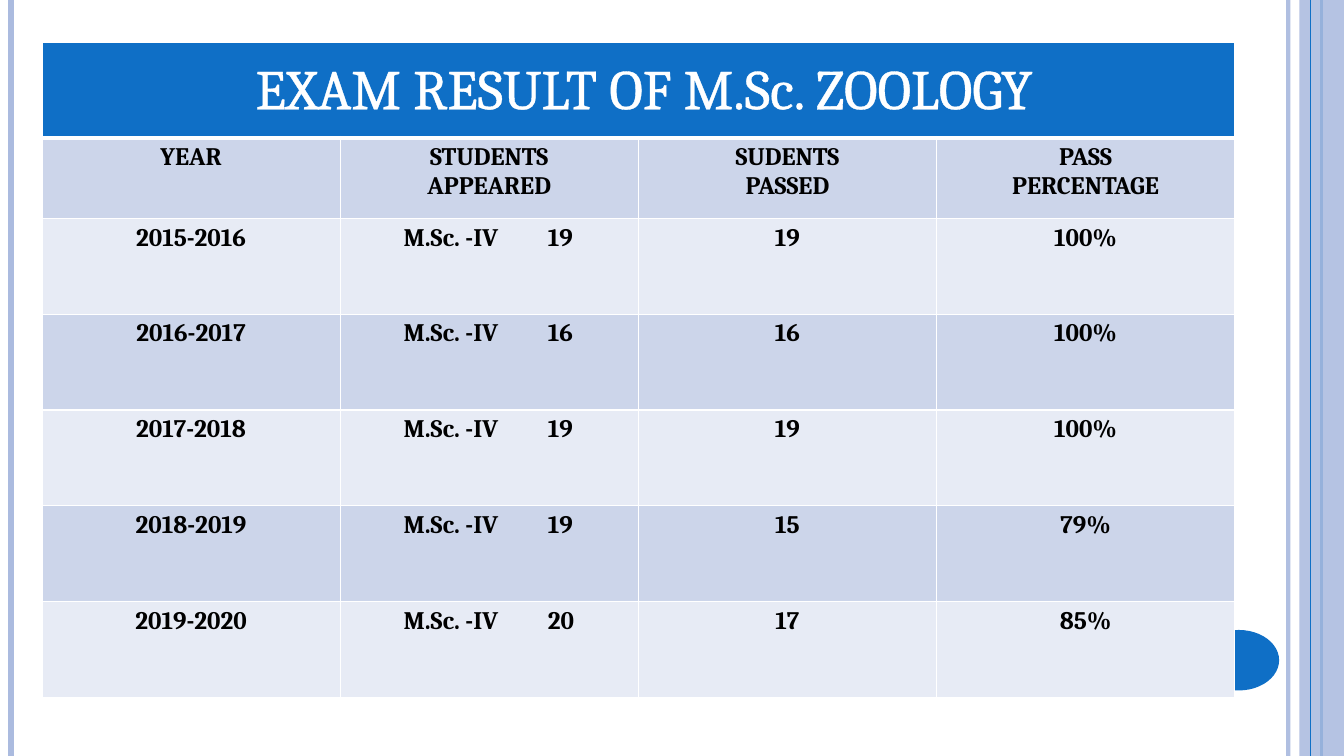
from dataclasses import dataclass

from lxml import etree
from pptx import Presentation, util as u
from pptx.dml.color import RGBColor
from pptx.enum import shapes, text
from pptx.oxml import ns

COLS, ROWS = 160, 90  # grid of twelfths of an inch
UNIT = u.Inches(1) // 12

BLUE = RGBColor(0x0F, 0x6F, 0xC6)
LAVENDER = RGBColor(0xAB, 0xBB, 0xDF)
BAND_DARK = RGBColor(0xCC, 0xD5, 0xEA)
BAND_LIGHT = RGBColor(0xE7, 0xEB, 0xF5)
WHITE = RGBColor(0xFF, 0xFF, 0xFF)
BLACK = RGBColor(0, 0, 0)

CELL_FONT = {"name": "Cambria", "size": u.Pt(18), "bold": True}
TITLE_FONT = {"name": "Cambria", "size": u.Pt(40)}


@dataclass
class Rule:
    col: float
    color: RGBColor
    points: float
    alpha: int = 100


@dataclass
class Panel:
    kind: shapes.MSO_SHAPE
    box: tuple[float, float, float, float]
    color: RGBColor
    alpha: int = 100


@dataclass
class Result:
    year: str
    appeared: int
    passed: int
    percentage: str

    def texts(self) -> list[str]:
        return [self.year, f"M.Sc. -IV\t{self.appeared}",
                str(self.passed), self.percentage]


DECOR = [
    Rule(153.36, LAVENDER, 3, 93),
    Rule(1.32, LAVENDER, 4.5),
    Rule(157.32, BLUE, 1.5),
    Panel(shapes.MSO_SHAPE.RECTANGLE, (154.68, 0, 5.32, ROWS), LAVENDER, 87),
    Rule(156, BLUE, 0.75),
    Panel(shapes.MSO_SHAPE.OVAL, (142.68, 75, 9.6, 7.2), BLUE),
]

HEADINGS = ["YEAR", "STUDENTS\nAPPEARED", "SUDENTS\nPASSED", "PASS\nPERCENTAGE"]
RESULTS = [
    Result("2015-2016", 19, 19, "100%"),
    Result("2016-2017", 16, 16, "100%"),
    Result("2017-2018", 19, 19, "100%"),
    Result("2018-2019", 19, 15, "79%"),
    Result("2019-2020", 20, 17, "85%"),
]
TABLE_BOX = (5, 5, 142, 78)
ROW_HEIGHTS = [11.4, 9.6] + [11.4] * len(RESULTS)
TITLE_BOX = (16.44, 5.76, 120.48, 9.24)


def grid(*cells: float) -> list[int]:
    return [round(c * UNIT) for c in cells]


def set_alpha(element, percent: int) -> None:
    if percent < 100:
        color = next(element.iter(ns.qn("a:srgbClr")))
        etree.SubElement(color, ns.qn("a:alpha"), val=str(percent * 1000))


def set_font(font, values: dict, color: RGBColor) -> None:
    for name, value in values.items():
        setattr(font, name, value)
    font.color.rgb = color


def line_element(tag: str, points: float):
    """Make a white outline, for a cell side or for letters."""
    ln = etree.Element(ns.qn(tag), w=str(u.Pt(points)))
    fill = etree.SubElement(ln, ns.qn("a:solidFill"))
    etree.SubElement(fill, ns.qn("a:srgbClr"), val=str(WHITE))
    return ln


def add_rule(slide, rule: Rule) -> None:
    x, bottom = grid(rule.col, ROWS)
    line = slide.shapes.add_connector(shapes.MSO_CONNECTOR.STRAIGHT, x, 0, x, bottom)
    line.line.color.rgb = rule.color
    line.line.width = u.Pt(rule.points)
    props = line._element.spPr
    set_alpha(props, rule.alpha)
    etree.SubElement(props, ns.qn("a:effectLst"))


def add_panel(slide, panel: Panel) -> None:
    sp = slide.shapes.add_shape(panel.kind, *grid(*panel.box))
    sp.shadow.inherit = False
    sp.fill.solid()
    sp.fill.fore_color.rgb = panel.color
    sp.line.fill.background()
    set_alpha(sp._element.spPr, panel.alpha)


def style_cell(cell, color: RGBColor, top: float = 1, bottom: float = 1) -> None:
    cell.fill.solid()
    cell.fill.fore_color.rgb = color
    sides = {"a:lnL": 1, "a:lnR": 1, "a:lnT": top, "a:lnB": bottom}
    for i, (tag, points) in enumerate(sides.items()):
        cell._tc.get_or_add_tcPr().insert(i, line_element(tag, points))


def write_cell(cell, words: str) -> None:
    cell.text = words
    tabbed = "\t" in words
    if tabbed:
        cell.margin_left = u.Inches(0.63)
    for p in cell.text_frame.paragraphs:
        p.alignment = text.PP_ALIGN.LEFT if tabbed else text.PP_ALIGN.CENTER
        if tabbed:
            tabs = etree.SubElement(p._p.get_or_add_pPr(), ns.qn("a:tabLst"))
            etree.SubElement(tabs, ns.qn("a:tab"), pos=str(u.Inches(1.43)), algn="l")
        for r in p.runs:
            set_font(r.font, CELL_FONT, BLACK)


def add_results(slide) -> None:
    rows = [HEADINGS] + [result.texts() for result in RESULTS]
    table = slide.shapes.add_table(len(ROW_HEIGHTS), len(HEADINGS), *grid(*TABLE_BOX)).table
    table.first_row = table.horz_banding = False
    for column in table.columns:
        column.width, = grid(TABLE_BOX[2] / len(HEADINGS))
    for row, height in zip(table.rows, ROW_HEIGHTS):
        row.height, = grid(height)
    for cell in table.rows[0].cells:
        style_cell(cell, BLUE, bottom=3)
    table.cell(0, 0).merge(table.cell(0, len(HEADINGS) - 1))
    for i, words in enumerate(rows, start=1):
        for j, word in enumerate(words):
            cell = table.cell(i, j)
            write_cell(cell, word)
            style_cell(cell, BAND_DARK if i % 2 else BAND_LIGHT, top=3 if i == 1 else 1)


def add_title(slide) -> None:
    tf = slide.shapes.add_textbox(*grid(*TITLE_BOX)).text_frame
    tf.word_wrap = False
    tf.auto_size = text.MSO_AUTO_SIZE.SHAPE_TO_FIT_TEXT
    p = tf.paragraphs[0]
    p.alignment = text.PP_ALIGN.CENTER
    r = p.add_run()
    r.text = "EXAM RESULT OF M.Sc. ZOOLOGY"
    set_font(r.font, TITLE_FONT, WHITE)
    r._r.get_or_add_rPr().insert(0, line_element("a:ln", 1.45))


def main() -> None:
    prs = Presentation()
    prs.slide_width, prs.slide_height = grid(COLS, ROWS)
    slide = prs.slides.add_slide(prs.slide_layouts[6])
    for item in DECOR:
        if isinstance(item, Rule):
            add_rule(slide, item)
        else:
            add_panel(slide, item)
    add_results(slide)
    add_title(slide)
    prs.save("out.pptx")


if __name__ == "__main__":
    main()
